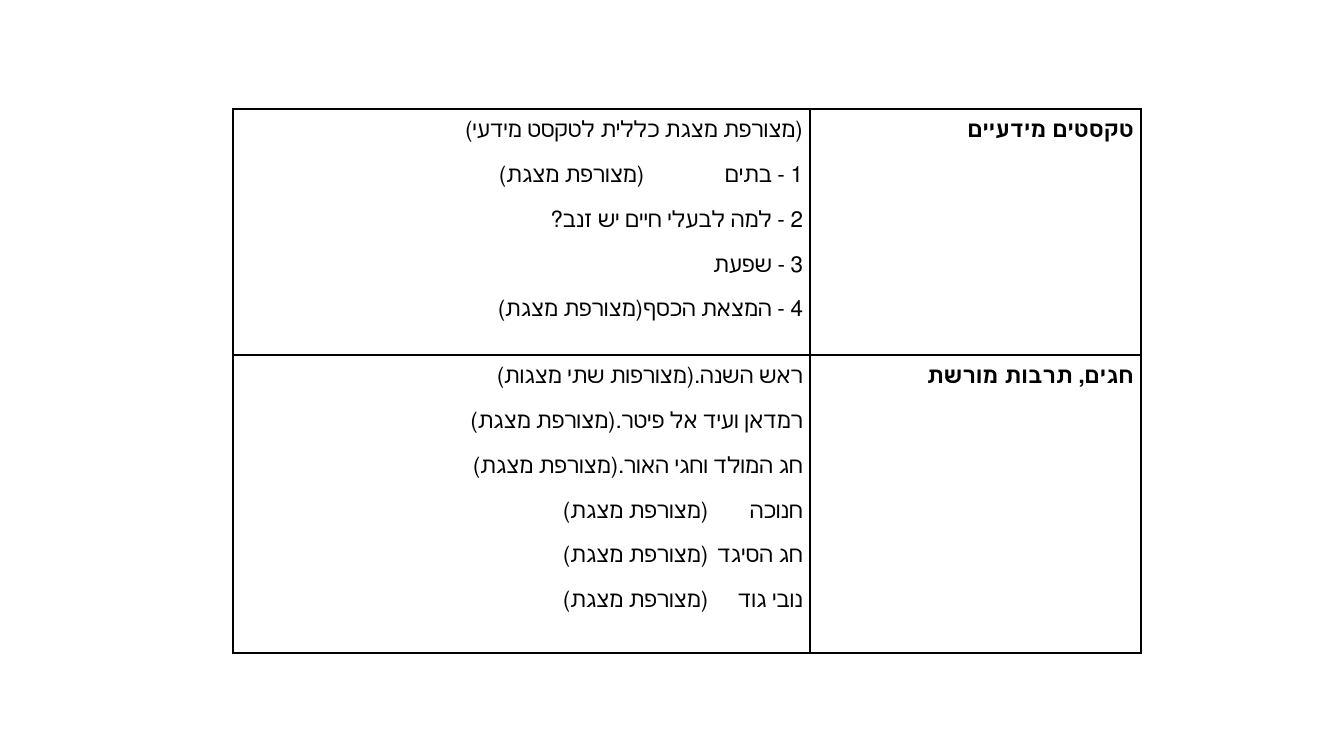
from lxml.etree import SubElement
from pptx import Presentation
from pptx.dml.color import RGBColor
from pptx.enum.text import PP_ALIGN
from pptx.oxml.ns import qn
from pptx.util import Emu, Pt

ATTACHED = "(מצורפת מצגת)"
TOPICS = [
    ("טקסטים מידעיים", 304, 246, [
        ("(מצורפת מצגת כללית לטקסט מידעי)",),
        ("1 - בתים", ATTACHED),
        ("2 - למה לבעלי חיים יש זנב?",),
        ("3 - שפעת",),
        ("4 - המצאת הכסף", ATTACHED),
    ]),
    ("חגים, תרבות מורשת", 240, 298, [
        ("ראש השנה.", "(מצורפות שתי מצגות)"),
        ("רמדאן ועיד אל פיטר.", ATTACHED),
        ("חג המולד וחגי האור.", ATTACHED),
        ("חנוכה", ATTACHED),
        ("חג הסיגד", ATTACHED),
        ("נובי גוד", ATTACHED),
    ]),
]
LEFT, TOP = 233, 109
COLUMN_WIDTHS = [577, 331]
SIDE_MARGIN = 7
BLACK = "000000"


def px(length):
    """Convert pixels to EMU."""
    return Emu(round(length * 914400 / 100.8))


def color(value):
    """Convert a hex string to a colour."""
    return RGBColor.from_string(value)


def add_borders(cell):
    """Draw a thin black line on every side of a cell."""
    properties = cell._tc.get_or_add_tcPr()
    for position, side in enumerate(("lnL", "lnR", "lnT", "lnB")):
        line = properties.makeelement(qn(f"a:{side}"), {"w": str(Pt(1))})
        properties.insert(position, line)
        fill = SubElement(line, qn("a:solidFill"))
        SubElement(fill, qn("a:srgbClr"), val=BLACK)


def write_cell(cell, lines, tab, bold=False):
    """Fill a cell with right-to-left lines whose notes start at the tab."""
    cell.fill.background()
    add_borders(cell)
    cell.margin_left = cell.margin_right = px(SIDE_MARGIN)
    cell.margin_top = cell.margin_bottom = 0
    frame = cell.text_frame
    frame.text = "\n".join("\t".join(line) for line in lines)
    for paragraph, line in zip(frame.paragraphs, lines):
        paragraph.alignment = PP_ALIGN.RIGHT
        paragraph.line_spacing = 1.5
        paragraph.space_after = Pt(8)
        properties = paragraph._p.get_or_add_pPr()
        properties.set("rtl", "1")
        if len(line) > 1:
            tabs = SubElement(properties, qn("a:tabLst"))
            SubElement(tabs, qn("a:tab"), pos=str(px(tab)), algn="l")
        paragraph.font.name = "Calibri"
        paragraph.font.size = Pt(16)
        paragraph.font.bold = bold
        paragraph.font.color.rgb = color(BLACK)


def main():
    """Build the slide with the topics table."""
    presentation = Presentation()
    presentation.slide_width, presentation.slide_height = px(1344), px(756)
    slide = presentation.slides.add_slide(presentation.slide_layouts[6])
    height = sum(topic[2] for topic in TOPICS)
    frame = slide.shapes.add_table(
        len(TOPICS), 2, px(LEFT), px(TOP), px(sum(COLUMN_WIDTHS)), px(height))
    table = frame.table
    table.first_row = table.horz_banding = False
    for column, width in zip(table.columns, COLUMN_WIDTHS):
        column.width = px(width)
    for row, (topic, tab, row_height, lines) in zip(table.rows, TOPICS):
        row.height = px(row_height)
        write_cell(row.cells[0], lines, tab)
        write_cell(row.cells[1], [(topic,)], tab, bold=True)
    presentation.save("out.pptx")


if __name__ == "__main__":
    main()
